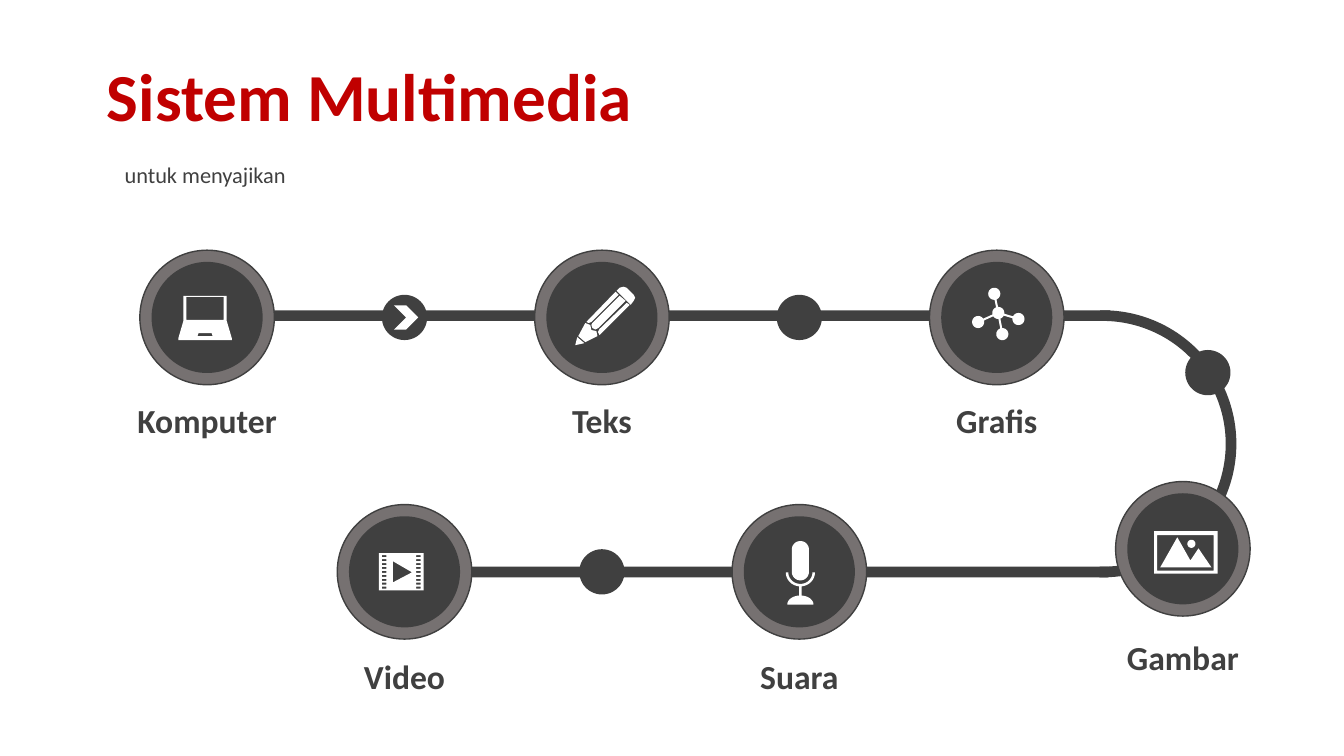
from math import cos, sin, pi, hypot

from pptx import Presentation
from pptx import util as u
from pptx.dml.color import RGBColor
from pptx.enum import shapes, text
from pptx.util import Cm

# ---- Content (lengths in cm) ----
TITLE = "Sistem Multimedia"
SUBTITLE = "untuk menyajikan"
DARK, GREY, WHITE, RED = "404040", "767171", "FFFFFF", "C00000"
FONT = "Calibri"

LEFT, PITCH = 5.22, 9.95          # first column and column distance
TOP_ROW, BOTTOM_ROW = 8.0, 14.41  # centre heights of the rows
RING, DISC, DOT, TRACK = 3.39, 2.8, 1.14, 0.27
ICON_UNIT = 0.0254                # icon grid step


def column(number):
    return LEFT + number * PITCH


# label, centre x, centre y, distance from centre to label top
STATIONS = [
    ("Komputer", column(0), TOP_ROW, 1.96),
    ("Teks", column(1), TOP_ROW, 1.96),
    ("Grafis", column(2), TOP_ROW, 1.96),
    ("Video", column(0.5), BOTTOM_ROW, 2.0),
    ("Suara", column(1.5), BOTTOM_ROW, 2.0),
    ("Gambar", 29.81, 13.83, 2.1),
]
DOTS = [(column(0.5), TOP_ROW), (column(1.5), TOP_ROW),
        (column(1), BOTTOM_ROW), (30.44, 9.39)]


# ---- Icon outlines, in icon units around the station centre ----
def box(x, y, w, h):
    return [(x, y), (x + w, y), (x + w, y + h), (x, y + h)]


def arc(cx, cy, rx, ry, start=0, end=360, steps=24):
    angles = [(start + (end - start) * i / steps) * pi / 180 for i in range(steps + 1)]
    return [(cx + rx * cos(a), cy + ry * sin(a)) for a in angles]


def spoke(hub, tip, radius, half=1):
    dx, dy = tip[0] - hub[0], tip[1] - hub[1]
    length = hypot(dx, dy)
    dx, dy = dx / length, dy / length
    ends = [(radius, half), (length - radius, half),
            (length - radius, -half), (radius, -half)]
    return [(hub[0] + a * dx - b * dy, hub[1] + a * dy + b * dx) for a, b in ends]


LAPTOP = [
    [(-23.5, -21.5), (19.5, -21.5), (19.5, 3.5), (24.5, 20.5),
     (24.5, 22.5), (-28.5, 22.5), (-28.5, 20.5), (-23.5, 3.5)],
    box(-20.5, -20.5, 37, 23),
    [(-8.5, 15.5), (-9.5, 18.5), (5.5, 18.5), (4.5, 15.5)],
]
PENCIL = [
    [(-24.5, 19.5), (-17.5, 25.5), (-26.5, 27.5)],
    [(-16.5, 5.5), (-11.5, 7.5), (-10.5, 12.5), (-5.5, 13.5),
     (-4.5, 18.5), (-16.5, 24.5), (-23.5, 18.5)],
    [(24.5, -14.5), (27.5, -12.5), (-2.5, 17.5), (-4, 14.5), (-2.5, 11.5)],
    [(17.5, -21.5), (23.5, -16.5), (-3.5, 10.5), (-6.5, 12),
     (-9.5, 10.5), (-10.5, 7.5), (-9.5, 5.5)],
    [(13.5, -25.5), (16.5, -22.5), (-10.5, 4.5), (-13, 5.5), (-15.5, 4.5)],
    [(21.5, -30.5), (24.5, -29.5), (31.5, -22.5), (33, -19.5),
     (31.5, -16.5), (28.5, -12.5), (14.5, -26.5), (17.5, -29.5)],
]
HUB = (1.5, -4.5)
TIPS = [(-2.5, -23.5), (21.5, 1.5), (5.5, 16.5), (-18.5, 4.5)]
NETWORK = ([arc(x, y, 6, 6) for x, y in [HUB] + TIPS]
           + [spoke(HUB, tip, 6) for tip in TIPS])
FILM = ([box(-25.5, -18.5, 44.5, 37), [(-11.5, -10.5), (-11.5, 10.5), (7.5, 0.5)]]
        + [box(x, -16.5 + 3.9 * i, 4.5, 2) for x in (-22.5, 11.5) for i in range(9)])
MICROPHONE = [
    arc(1, -22, 8.5, 8.5, 180, 360) + arc(1, 0, 8.5, 8.5, 0, 180),
    arc(1, 0.5, 14.5, 14, 0, 180) + arc(1, 0.5, 12, 11.5, 180, 0),
    box(-0.25, 14.5, 2.5, 9),
    arc(1, 32.5, 13, 9, 180, 360),
]
PHOTO = [
    box(-28.5, -17.5, 63, 42),
    box(-25.5, -13.5, 56, 35),
    [(-5.5, -11.5), (7.5, 11.5), (15.5, -0.5), (28.5, 18.5), (-22.5, 18.5)],
    arc(8.5, -5, 4, 4),
]
ICONS = {"Komputer": LAPTOP, "Teks": PENCIL, "Grafis": NETWORK,
         "Video": FILM, "Suara": MICROPHONE, "Gambar": PHOTO}

# ---- Slide ----
prs = Presentation()
prs.slide_width, prs.slide_height = Cm(33.87), Cm(19.05)
slide = prs.slides.add_slide(prs.slide_layouts[5])
SHAPE = shapes.MSO_SHAPE


def color(hex_string):
    return RGBColor.from_string(hex_string)


def paint(part, fill, line=None):
    part.shadow.inherit = False
    part.fill.solid()
    part.fill.fore_color.rgb = color(fill)
    if line:
        part.line.color.rgb = color(line)
        part.line.width = u.Pt(1)
    else:
        part.line.fill.background()


def add_part(kind, left, top, width, height, fill, line=None):
    part = slide.shapes.add_shape(kind, Cm(left), Cm(top), Cm(width), Cm(height))
    paint(part, fill, line)
    return part


def add_centred(kind, x, y, size, fill, line=None):
    return add_part(kind, x - size / 2, y - size / 2, size, size, fill, line)


def add_icon(contours, x, y):
    placed = [[(Cm(x + px * ICON_UNIT), Cm(y + py * ICON_UNIT)) for px, py in contour]
              for contour in contours]
    builder = slide.shapes.build_freeform(*placed[0][0])
    for contour in placed:
        builder.move_to(*contour[0])
        builder.add_line_segments(contour[1:], close=True)
    paint(builder.convert_to_shape(), WHITE)


def write(holder, words, size, hex_string, bold, align):
    holder.text_frame.text = words
    holder.text_frame.word_wrap = True
    paragraph = holder.text_frame.paragraphs[0]
    paragraph.alignment = align
    font = paragraph.runs[0].font
    font.name, font.size, font.bold = FONT, u.Pt(size), bold
    font.color.rgb = color(hex_string)
    return paragraph


def add_label(words, x, top, height, size, bold):
    width = 7.5
    label = slide.shapes.add_textbox(Cm(x - width / 2), Cm(top), Cm(width), Cm(height))
    write(label, words, size, DARK, bold, text.PP_ALIGN.CENTER)


# Title and subtitle
title = slide.shapes.title
title.left, title.top, title.width, title.height = Cm(2.44), Cm(0.25), Cm(16.94), Cm(4.52)
heading = write(title, TITLE, 48, RED, True, text.PP_ALIGN.LEFT)
heading.line_spacing, heading.space_before = 0.9, u.Pt(10)
title.text_frame.vertical_anchor = text.MSO_ANCHOR.MIDDLE
title.text_frame.auto_size = text.MSO_AUTO_SIZE.NONE
add_label(SUBTITLE, 5.17, 3.94, 0.94, 16, False)

# Track: bend and two straight pieces
bend = add_part(SHAPE.BLOCK_ARC, 24.43, 7.82, 6.73, 6.73, DARK)
for index, value in enumerate((161.27, 54.9, 0.04)):
    bend.adjustments[index] = value
add_part(SHAPE.RECTANGLE, 5.16, 7.82, 22.81, TRACK, DARK)
add_part(SHAPE.RECTANGLE, 9.02, 14.28, 18.92, TRACK, DARK)

# Dots between stations, the first with a chevron
for x, y in DOTS:
    add_centred(SHAPE.OVAL, x, y, DOT, DARK)
add_centred(SHAPE.CHEVRON, DOTS[0][0] + 0.04, TOP_ROW, 0.61, WHITE)

# Stations
for name, x, y, label_gap in STATIONS:
    add_centred(SHAPE.OVAL, x, y, RING, GREY, DARK)
    add_centred(SHAPE.OVAL, x, y, DISC, DARK)
    add_icon(ICONS[name], x, y)
    add_label(name, x, y + label_gap, 1.27, 24, True)

prs.save("out.pptx")
